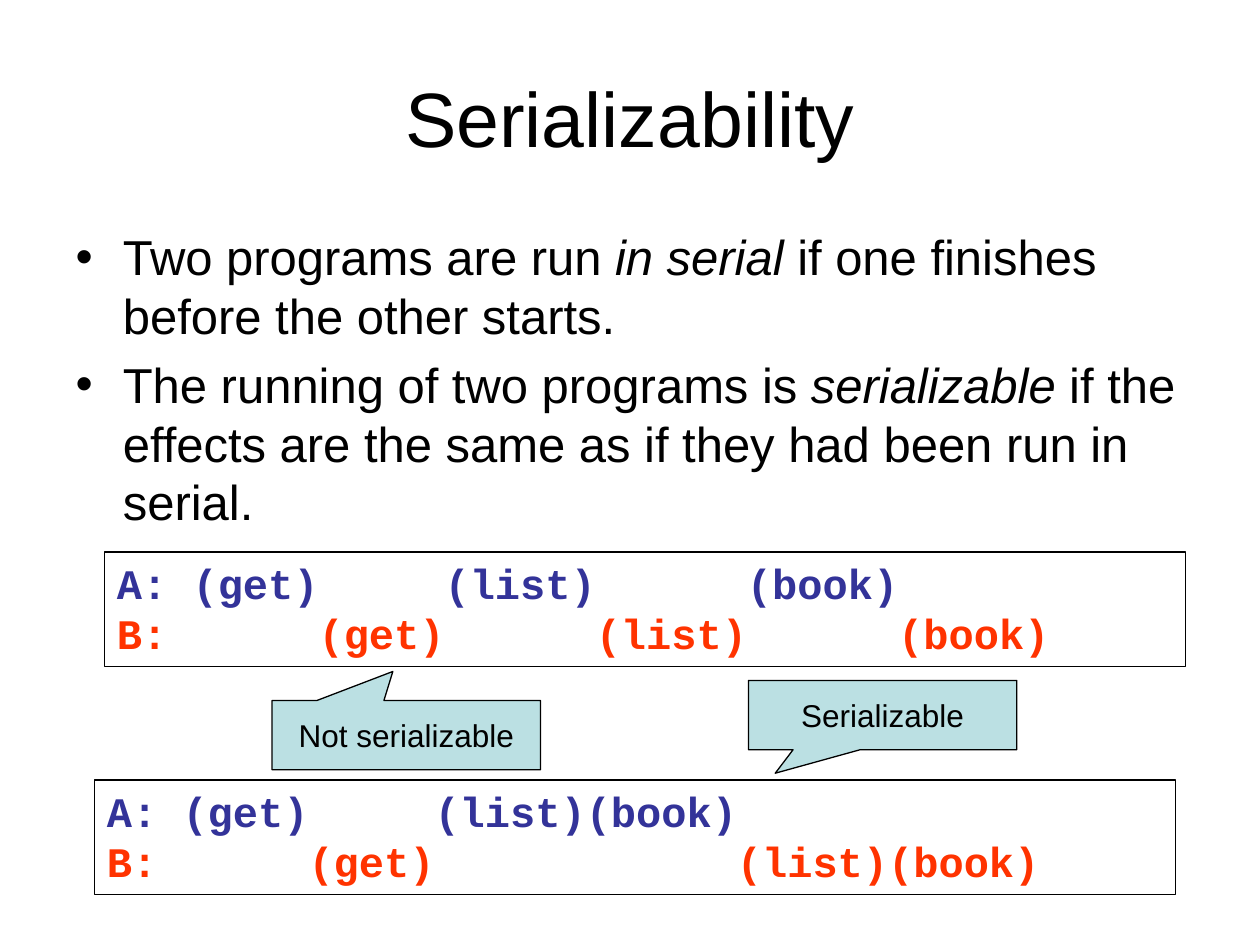
from dataclasses import dataclass

import pptx
import pptx.dml.color
import pptx.enum.shapes
import pptx.enum.text
import pptx.oxml
import pptx.oxml.ns
import pptx.util

Inches = pptx.util.Inches
Pt = pptx.util.Pt
RGB = pptx.dml.color.RGBColor.from_string
SHAPE = pptx.enum.shapes.MSO_SHAPE
ALIGN = pptx.enum.text.PP_ALIGN
ANCHOR = pptx.enum.text.MSO_ANCHOR
AUTO_SIZE = pptx.enum.text.MSO_AUTO_SIZE


@dataclass(frozen=True)
class Theme:
    ink: str = "000000"
    paper: str = "FFFFFF"
    callout: str = "BBE0E3"
    program_a: str = "333399"
    program_b: str = "FF3300"
    sans: str = "Arial"
    mono: str = "Courier New"
    title: int = 44
    body: int = 28
    code: int = 24
    label: int = 18
    line: float = 0.75


THEME = Theme()
CHAR = 0.2  # width of one code character, in inches


def add_run(p, text, size, color=THEME.ink, font=THEME.sans, bold=None, italic=None):
    r = p.add_run()
    r.text = text
    r.font.name, r.font.size = font, Pt(size)
    r.font.color.rgb = RGB(color)
    r.font.bold, r.font.italic = bold, italic


def place(sp, box):
    sp.left, sp.top, sp.width, sp.height = (Inches(v) for v in box)


def add_outlined(s, kind, box, fill=None):
    sp = s.shapes.add_shape(kind, *(Inches(v) for v in box))
    sp.shadow.inherit = False
    if fill:
        sp.fill.solid()
        sp.fill.fore_color.rgb = RGB(fill)
    else:
        sp.fill.background()
    sp.line.color.rgb = RGB(THEME.ink)
    sp.line.width = Pt(THEME.line)
    sp.text_frame.word_wrap = True
    return sp


def set_tabs(p, columns):
    """Put a left tab stop at each character column."""
    tabs = pptx.oxml.parse_xml("<a:tabLst %s/>" % pptx.oxml.ns.nsdecls("a"))
    for column in columns:
        tab = tabs.makeelement(pptx.oxml.ns.qn("a:tab"),
                               {"pos": str(Inches(column * CHAR)), "algn": "l"})
        tabs.append(tab)
    p._p.get_or_add_pPr().append(tabs)


def build_title(s, box, text):
    sp = s.shapes.title
    place(sp, box)
    tf = sp.text_frame
    tf.vertical_anchor = ANCHOR.MIDDLE
    p = tf.paragraphs[0]
    p.alignment = ALIGN.CENTER
    add_run(p, text, THEME.title)


def build_body(s, box, items):
    sp = s.placeholders[1]
    place(sp, box)
    tf = sp.text_frame
    tf.auto_size = AUTO_SIZE.NONE
    for i, (before, term, after) in enumerate(items):
        p = tf.add_paragraph() if i else tf.paragraphs[0]
        add_run(p, before, THEME.body)
        add_run(p, term, THEME.body, italic=True)
        add_run(p, after, THEME.body, italic=False)


def build_schedule(s, box, rows):
    """Each row is a program name, a colour and its steps by column."""
    tf = add_outlined(s, SHAPE.RECTANGLE, box).text_frame
    tf.vertical_anchor = ANCHOR.TOP
    for i, (name, color, steps) in enumerate(rows):
        p = tf.add_paragraph() if i else tf.paragraphs[0]
        p.alignment = ALIGN.LEFT
        p.line_spacing = Pt(28.6)
        p.space_before = Pt(0 if i else 3)
        set_tabs(p, steps)
        text = "\t".join([name + ":", *steps.values()])
        add_run(p, text, THEME.code, color, THEME.mono, bold=True)


def build_callout(s, box, text, tip):
    sp = add_outlined(s, SHAPE.RECTANGULAR_CALLOUT, box, THEME.callout)
    sp.adjustments[0], sp.adjustments[1] = tip
    tf = sp.text_frame
    tf.vertical_anchor = ANCHOR.MIDDLE
    p = tf.paragraphs[0]
    p.alignment = ALIGN.CENTER
    add_run(p, text, THEME.label)


def main():
    prs = pptx.Presentation()
    prs.slide_width, prs.slide_height = Inches(10), Inches(7.5)
    s = prs.slides.add_slide(prs.slide_layouts[1])
    s.background.fill.solid()
    s.background.fill.fore_color.rgb = RGB(THEME.paper)

    # Title and definitions
    build_title(s, (0.5, 0.3, 9, 1.25), "Serializability")
    build_body(s, (0.5, 1.75, 9, 4.95), [
        ("Two programs are run ", "in serial",
         " if one finishes before the other starts."),
        ("The running of two programs is ", "serializable",
         " if the effects are the same as if they had been run in serial."),
    ])

    # Interleaved schedules
    a, b = THEME.program_a, THEME.program_b
    build_schedule(s, (0.83, 4.38, 8.58, 0.91), [
        ("A", a, {3: "(get)", 13: "(list)", 25: "(book)"}),
        ("B", b, {8: "(get)", 19: "(list)", 31: "(book)"}),
    ])
    build_schedule(s, (0.75, 6.19, 8.58, 0.91), [
        ("A", a, {3: "(get)", 13: "(list)(book)"}),
        ("B", b, {8: "(get)", 25: "(list)(book)"}),
    ])

    # Verdicts
    build_callout(s, (2.16, 5.56, 2.13, 0.55), "Not serializable", (-0.05, -0.92))
    build_callout(s, (5.94, 5.4, 2.13, 0.55), "Serializable", (-0.4, 0.84))

    prs.save("out.pptx")


if __name__ == "__main__":
    main()
